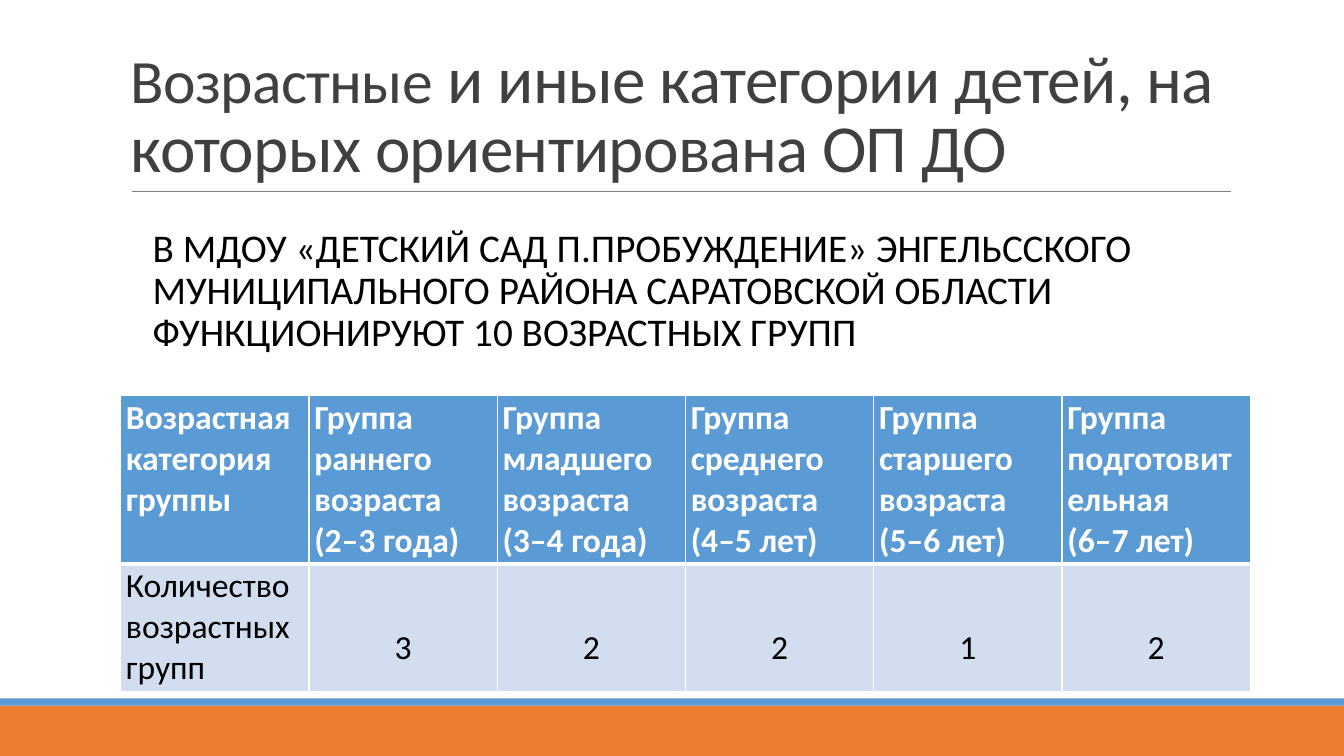
from lxml.etree import SubElement
from pptx import Presentation
from pptx.dml.color import RGBColor
from pptx.enum.shapes import MSO_CONNECTOR, MSO_SHAPE
from pptx.enum.text import MSO_ANCHOR, PP_ALIGN
from pptx.oxml.ns import qn
from pptx.util import Pt

EMU_PER_PX = 9525
FONT = "Calibri"
WHITE = RGBColor(0xFF, 0xFF, 0xFF)
BLACK = RGBColor(0, 0, 0)
DARK_GRAY = RGBColor(0x40, 0x40, 0x40)
RULE_GRAY = RGBColor(0x80, 0x80, 0x80)
ORANGE = RGBColor(0xED, 0x7D, 0x31)
BLUE = RGBColor(0x5B, 0x9B, 0xD5)
PALE_BLUE = RGBColor(0xD2, 0xDE, 0xEF)

TITLE = [
    ("Возрастные", 44),
    (" и иные категории детей, на которых ориентирована ОП ДО", 48),
]
SUMMARY = (
    "В МДОУ «ДЕТСКИЙ САД П.ПРОБУЖДЕНИЕ» ЭНГЕЛЬССКОГО МУНИЦИПАЛЬНОГО РАЙОНА "
    "САРАТОВСКОЙ ОБЛАСТИ ФУНКЦИОНИРУЮТ 10 ВОЗРАСТНЫХ ГРУПП"
)
AGE_GROUPS = [
    (["Возрастная категория группы"], "Количество возрастных групп"),
    (["Группа раннего возраста", "(2–3 года)"], "3"),
    (["Группа младшего возраста", "(3–4 года)"], "2"),
    (["Группа среднего возраста (4–5 лет)"], "2"),
    (["Группа старшего возраста (5–6 лет)"], "1"),
    (["Группа подготовительная", "(6–7 лет)"], "2"),
]
TABLE_BOX = (115, 377, 1076, 282)
ROW_HEIGHTS = (160, 122)


def px(*lengths):
    return [length * EMU_PER_PX for length in lengths]


def add_run(paragraph, text, size, color, bold=False, tracking=0):
    run = paragraph.add_run()
    run.text = text
    run.font.name = FONT
    run.font.size = Pt(size)
    run.font.bold = bold
    run.font.color.rgb = color
    if tracking:
        run._r.get_or_add_rPr().set("spc", str(tracking))


def add_band(slide, box, color):
    shape = slide.shapes.add_shape(MSO_SHAPE.RECTANGLE, *px(*box))
    shape.shadow.inherit = False
    shape.fill.solid()
    shape.fill.fore_color.rgb = color
    shape.line.fill.background()


def add_rule(slide, left, right, y):
    connector = slide.shapes.add_connector(
        MSO_CONNECTOR.STRAIGHT, *px(left, y, right, y)
    )
    connector.line.color.rgb = RULE_GRAY
    connector.line.width = Pt(0.5)
    SubElement(connector._element.spPr, qn("a:effectLst"))


def add_text(slide, box, runs, color, anchor, line_spacing, tracking=0):
    frame = slide.shapes.add_textbox(*px(*box)).text_frame
    frame.word_wrap = True
    frame.vertical_anchor = anchor
    paragraph = frame.paragraphs[0]
    paragraph.line_spacing = line_spacing
    for text, size in runs:
        add_run(paragraph, text, size, color, tracking=tracking)
    return paragraph


def set_borders(cell, bottom_width):
    properties = cell._tc.get_or_add_tcPr()
    for side, width in zip("LRTB", (1, 1, 1, bottom_width)):
        line = SubElement(properties, qn(f"a:ln{side}"), w=str(Pt(width)))
        fill = SubElement(line, qn("a:solidFill"))
        SubElement(fill, qn("a:srgbClr"), val=str(WHITE))


def fill_cell(cell, lines, fill, color, bold=False, bottom_width=1, count=False):
    set_borders(cell, bottom_width)
    cell.fill.solid()
    cell.fill.fore_color.rgb = fill
    cell.margin_left, cell.margin_right, cell.margin_top, cell.margin_bottom = px(
        5, 5, 2, 2
    )
    frame = cell.text_frame
    for index, text in enumerate(lines):
        paragraph = frame.add_paragraph() if index else frame.paragraphs[0]
        if count:
            paragraph.alignment = PP_ALIGN.CENTER
            paragraph.line_spacing = 2.5
        add_run(paragraph, text, 24, color, bold)


def add_group_table(slide):
    columns = len(AGE_GROUPS)
    table = slide.shapes.add_table(2, columns, *px(*TABLE_BOX)).table
    for row, height in zip(table.rows, ROW_HEIGHTS):
        row.height = height * EMU_PER_PX
    for index, (heading, value) in enumerate(AGE_GROUPS):
        table.columns[index].width = TABLE_BOX[2] * EMU_PER_PX // columns
        fill_cell(table.cell(0, index), heading, BLUE, WHITE, True, 3)
        fill_cell(table.cell(1, index), [value], PALE_BLUE, BLACK, count=index > 0)


def main():
    presentation = Presentation()
    presentation.slide_width, presentation.slide_height = px(1280, 720)
    slide = presentation.slides.add_slide(presentation.slide_layouts[6])
    add_band(slide, (0, 672, 1280, 48), ORANGE)
    add_band(slide, (0, 665, 1280, 7), BLUE)
    add_rule(slide, 126, 1172, 182)
    add_text(
        slide, (115, 30, 1056, 152), TITLE, DARK_GRAY, MSO_ANCHOR.BOTTOM, 0.85, -50
    )
    summary = add_text(
        slide, (136, 198, 1016, 160), [(SUMMARY, 28)], BLACK, MSO_ANCHOR.MIDDLE, 0.9
    )
    summary.space_before = Pt(12)
    summary.space_after = Pt(2)
    add_group_table(slide)
    presentation.save("out.pptx")


if __name__ == "__main__":
    main()
